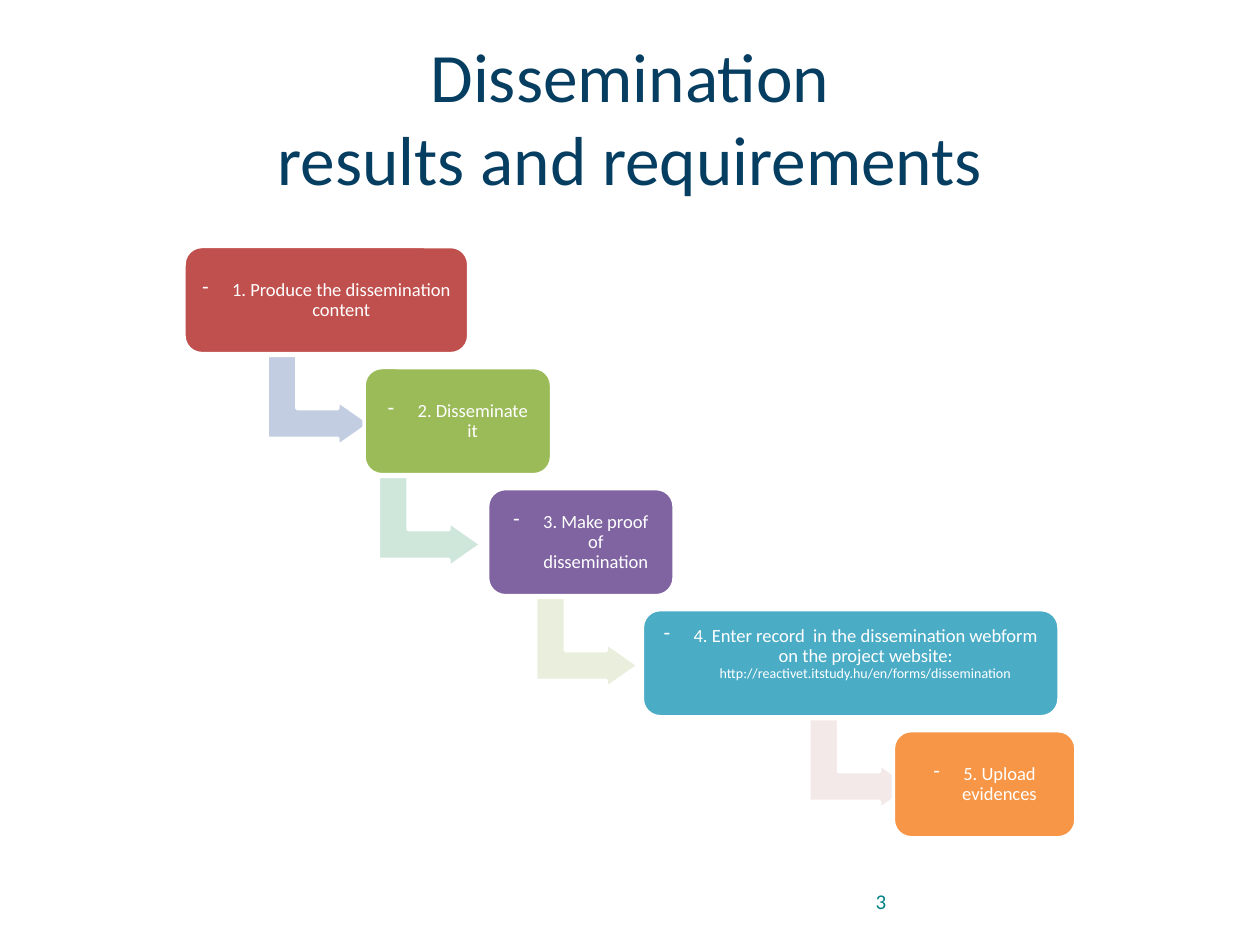
from lxml.etree import SubElement
from pptx import Presentation
from pptx.dml.color import RGBColor
from pptx.enum.shapes import MSO_SHAPE
from pptx.enum.text import MSO_ANCHOR, MSO_AUTO_SIZE, PP_ALIGN
from pptx.oxml.ns import qn
from pptx.util import Cm, Pt

COLORS = {
    "title": "063E61", "number": "018287", "white": "FFFFFF",
    "red": "C0504D", "green": "9BBB59", "purple": "8064A2",
    "teal": "4BACC6", "orange": "F79646",
    "pale_blue": "C2CDE1", "pale_green": "CFE7DA",
    "pale_olive": "EAEEDC", "pale_pink": "F4E9E9",
}

# Staircase geometry in cm
TOP, PITCH, BOX_H = 4.97, 2.44, 2.16
ARROW_W, ARROW_H, ARROW_DROP = 1.83, 2.08, 2.07
INSET, BULLET_INDENT = 0.23, 0.6

# Box left, box width, colour, text anchor, runs of (text, size)
STEPS = [
    (3.71, 5.74, "red", MSO_ANCHOR.MIDDLE,
     [("1. Produce the dissemination content", 10.6)]),
    (7.34, 3.78, "green", MSO_ANCHOR.MIDDLE, [("2. Disseminate it", 10.6)]),
    (9.83, 3.76, "purple", MSO_ANCHOR.MIDDLE,
     [("3. Make proof of dissemination", 10.6)]),
    (12.95, 8.4, "teal", MSO_ANCHOR.TOP,
     [("4. Enter record  in the dissemination webform on the project website: ", 10.6),
      ("http://reactivet.itstudy.hu/en/forms/dissemination", 8)]),
    (18.01, 3.68, "orange", MSO_ANCHOR.MIDDLE, [("5. Upload evidences", 10.6)]),
]
# Arrow left and colour, one below each box but the last
ARROWS = [(5.51, "pale_blue"), (7.75, "pale_green"),
          (10.92, "pale_olive"), (16.43, "pale_pink")]


def rgb(name):
    return RGBColor.from_string(COLORS[name])


def set_attrs(obj, values):
    for name, value in values.items():
        setattr(obj, name, value)


def format_font(font, size, color):
    set_attrs(font, {"name": "Calibri", "size": Pt(size)})
    font.color.rgb = rgb(color)


def add_title(s, text):
    sp = s.shapes.title
    set_attrs(sp, {"left": Cm(1.27), "top": Cm(0.76),
                   "width": Cm(22.86), "height": Cm(3.18)})
    tf = sp.text_frame
    tf.text = text
    set_attrs(tf, {"auto_size": MSO_AUTO_SIZE.NONE, "word_wrap": True,
                   "vertical_anchor": MSO_ANCHOR.MIDDLE})
    p = tf.paragraphs[0]
    p.alignment = PP_ALIGN.CENTER
    for r in p.runs:
        format_font(r.font, 39.6, "title")


def add_page_number(s, text):
    tf = s.shapes.add_textbox(Cm(17.4), Cm(17.65), Cm(6.73), Cm(1.02)).text_frame
    set_attrs(tf, {"word_wrap": True, "vertical_anchor": MSO_ANCHOR.MIDDLE})
    r = tf.paragraphs[0].add_run()
    r.text = text
    format_font(r.font, 12, "number")


def add_filled_shape(s, kind, left, top, width, height, color, adjustments):
    sp = s.shapes.add_shape(kind, Cm(left), Cm(top), Cm(width), Cm(height))
    sp.shadow.inherit = False
    sp.fill.solid()
    sp.fill.fore_color.rgb = rgb(color)
    sp.line.color.rgb = rgb("white")
    sp.line.width = Pt(2)
    for i, value in enumerate(adjustments):
        sp.adjustments[i] = value
    return sp


def add_dash_bullet(p):
    pPr = p._p.get_or_add_pPr()
    pPr.set("marL", str(Cm(BULLET_INDENT)))
    pPr.set("indent", str(-Cm(BULLET_INDENT)))
    SubElement(pPr, qn("a:buChar")).set("char", "-")


def add_step(s, left, top, width, color, anchor, runs):
    sp = add_filled_shape(s, MSO_SHAPE.ROUNDED_RECTANGLE, left, top, width,
                          BOX_H, color, [0.167])
    tf = sp.text_frame
    set_attrs(tf, {"word_wrap": True, "vertical_anchor": anchor})
    for side in ("left", "top", "right", "bottom"):
        setattr(tf, f"margin_{side}", Cm(INSET))
    p = tf.paragraphs[0]
    add_dash_bullet(p)
    set_attrs(p, {"alignment": PP_ALIGN.CENTER, "line_spacing": 0.9})
    for text, size in runs:
        r = p.add_run()
        r.text = text
        format_font(r.font, size, "white")


def add_arrow(s, left, top, color):
    sp = add_filled_shape(s, MSO_SHAPE.BENT_UP_ARROW, left, top, ARROW_W,
                          ARROW_H, color, [0.328, 0.25, 0.358])
    sp.rotation = 90


def main():
    prs = Presentation()
    set_attrs(prs, {"slide_width": Cm(25.4), "slide_height": Cm(19.05)})
    s = prs.slides.add_slide(prs.slide_layouts[5])

    add_title(s, "Dissemination\vresults and requirements")
    add_page_number(s, "3")

    # Arrows lie behind the boxes they lead to
    for i, (left, color) in enumerate(ARROWS):
        add_arrow(s, left, TOP + ARROW_DROP + i * PITCH, color)
    for i, (left, width, color, anchor, runs) in enumerate(STEPS):
        add_step(s, left, TOP + i * PITCH, width, color, anchor, runs)

    prs.save("out.pptx")


if __name__ == "__main__":
    main()
